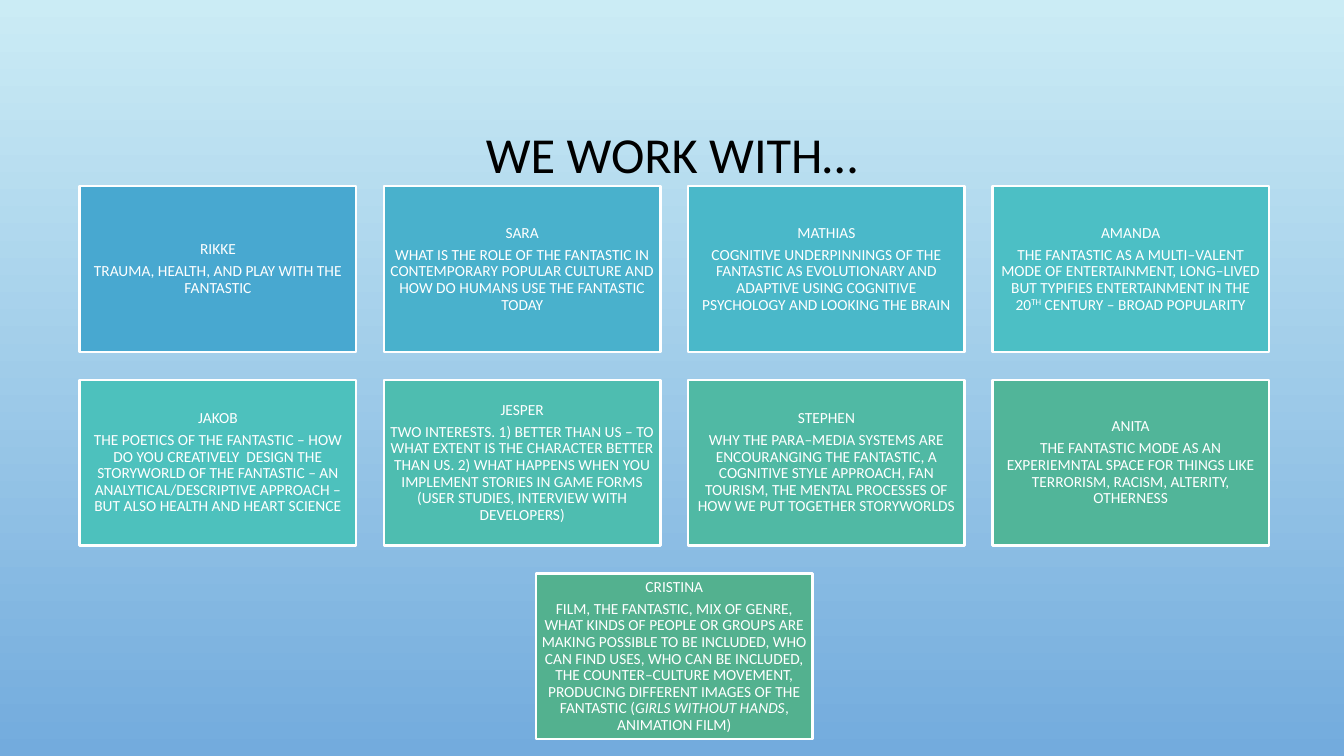
from pptx import Presentation
from pptx.dml.color import RGBColor
from pptx.enum.shapes import MSO_SHAPE
from pptx.enum.text import MSO_ANCHOR, MSO_AUTO_SIZE, PP_ALIGN
from pptx.util import Cm, Pt

RECT = MSO_SHAPE.RECTANGLE
MIDDLE = MSO_ANCHOR.MIDDLE
CENTER = PP_ALIGN.CENTER
FIXED = MSO_AUTO_SIZE.NONE

FONT = "Calibri"
BLACK = RGBColor(0, 0, 0)
WHITE = RGBColor(0xFF, 0xFF, 0xFF)
SKY = RGBColor(0xCB, 0xEC, 0xF5)
BLUE = RGBColor(0x73, 0xAB, 0xDD)
FILLS = [RGBColor.from_string(code) for code in (
    "48A8D0", "49B1CC", "4AB8C9", "4CBFC5", "4DC1BD",
    "4EBDB0", "50B9A4", "51B599", "53B18F")]

# Each card: a name, then the pieces of its text; every second piece is styled
CARDS = [
    ("RIKKE", ["TRAUMA, HEALTH, AND PLAY WITH THE FANTASTIC"]),
    ("SARA", ["WHAT IS THE ROLE OF THE FANTASTIC IN CONTEMPORARY POPULAR "
              "CULTURE AND HOW DO HUMANS USE THE FANTASTIC TODAY"]),
    ("MATHIAS", ["COGNITIVE UNDERPINNINGS OF THE FANTASTIC AS EVOLUTIONARY AND "
                 "ADAPTIVE USING COGNITIVE PSYCHOLOGY AND LOOKING THE BRAIN"]),
    ("AMANDA", ["THE FANTASTIC AS A MULTI–VALENT MODE OF ENTERTAINMENT, "
                "LONG–LIVED BUT TYPIFIES ENTERTAINMENT IN THE 20",
                "TH", " CENTURY – BROAD POPULARITY"]),
    ("JAKOB", ["THE POETICS OF THE FANTASTIC – HOW DO YOU CREATIVELY  DESIGN "
               "THE STORYWORLD OF THE FANTASTIC – AN ANALYTICAL/DESCRIPTIVE "
               "APPROACH – BUT ALSO HEALTH AND HEART SCIENCE"]),
    ("JESPER", ["TWO INTERESTS. 1) BETTER THAN US – TO WHAT EXTENT IS THE "
                "CHARACTER BETTER THAN US. 2) WHAT HAPPENS WHEN YOU IMPLEMENT "
                "STORIES IN GAME FORMS (USER STUDIES, INTERVIEW WITH "
                "DEVELOPERS)"]),
    ("STEPHEN", ["WHY THE PARA–MEDIA SYSTEMS ARE ENCOURANGING THE FANTASTIC, A "
                 "COGNITIVE STYLE APPROACH, FAN TOURISM, THE MENTAL PROCESSES "
                 "OF HOW WE PUT TOGETHER STORYWORLDS"]),
    ("ANITA", ["THE FANTASTIC MODE AS AN EXPERIEMNTAL SPACE FOR THINGS LIKE "
               "TERRORISM, RACISM, ALTERITY, OTHERNESS"]),
    ("CRISTINA", ["FILM, THE FANTASTIC, MIX OF GENRE, WHAT KINDS OF PEOPLE OR "
                  "GROUPS ARE MAKING POSSIBLE TO BE INCLUDED, WHO CAN FIND "
                  "USES, WHO CAN BE INCLUDED, THE COUNTER–CULTURE MOVEMENT, "
                  "PRODUCING DIFFERENT IMAGES OF THE FANTASTIC (",
                  "GIRLS WITHOUT HANDS", ", ANIMATION FILM)"]),
]
COLS = 4
GAP = Cm(0.7)


def set_type(para, size, color):
    para.alignment = CENTER
    para.line_spacing = 0.9
    for run in para.runs:
        run.font.name = FONT
        run.font.size = Pt(size)
        run.font.color.rgb = color


def paint_back(slide):
    fill = slide.background.fill
    fill.gradient()
    fill.gradient_angle = 270
    for stop, color, place in zip(fill.gradient_stops, (SKY, BLUE), (0, 1)):
        stop.color.rgb = color
        stop.position = place


def add_title(slide, left, top, width, height):
    title = slide.shapes.title
    title.left, title.top, title.width, title.height = left, top, width, height
    frame = title.text_frame
    frame.text = "WE WORK WITH…"
    frame.vertical_anchor = MIDDLE
    frame.auto_size = FIXED
    para = frame.paragraphs[0]
    para.space_before = Pt(0)
    set_type(para, 36, BLACK)


def add_card(slide, left, top, width, height, fill, name, pieces):
    card = slide.shapes.add_shape(RECT, left, top, width, height)
    card.shadow.inherit = False
    card.fill.solid()
    card.fill.fore_color.rgb = fill
    card.line.color.rgb = WHITE
    card.line.width = Pt(1.75)

    frame = card.text_frame
    frame.word_wrap = True
    frame.vertical_anchor = MIDDLE
    frame.margin_left = frame.margin_right = Cm(0.12)
    frame.margin_top = frame.margin_bottom = Cm(0.12)
    frame.text = name
    head = frame.paragraphs[0]
    head.space_after = Pt(3.85)
    body = frame.add_paragraph()
    for piece in pieces:
        body.add_run().text = piece
    for para in (head, body):
        set_type(para, 11, WHITE)

    # Ordinal ending is raised, film title is italic
    for run in body.runs[1::2]:
        if run.text == "TH":
            run.font._element.set("baseline", "30000")
        else:
            run.font.italic = True


def add_grid(slide, left, top, width, height):
    rows = -(-len(CARDS) // COLS)
    wide = (width - GAP * (COLS - 1)) // COLS
    high = (height - GAP * (rows - 1)) // rows
    for i, (name, pieces) in enumerate(CARDS):
        row, col = divmod(i, COLS)
        # A short last row is centred
        count = min(COLS, len(CARDS) - row * COLS)
        inset = (COLS - count) * (wide + GAP) // 2
        add_card(slide, left + inset + col * (wide + GAP),
                 top + row * (high + GAP), wide, high,
                 FILLS[i], name, pieces)


def main():
    deck = Presentation()
    deck.slide_width, deck.slide_height = Cm(33.87), Cm(19.05)
    slide = deck.slides.add_slide(deck.slide_layouts[5])
    paint_back(slide)
    add_title(slide, Cm(2.54), Cm(1.73), Cm(28.78), Cm(4.45))
    add_grid(slide, Cm(2.01), Cm(4.69), Cm(29.97), Cm(13.94))
    deck.save("out.pptx")


if __name__ == "__main__":
    main()
